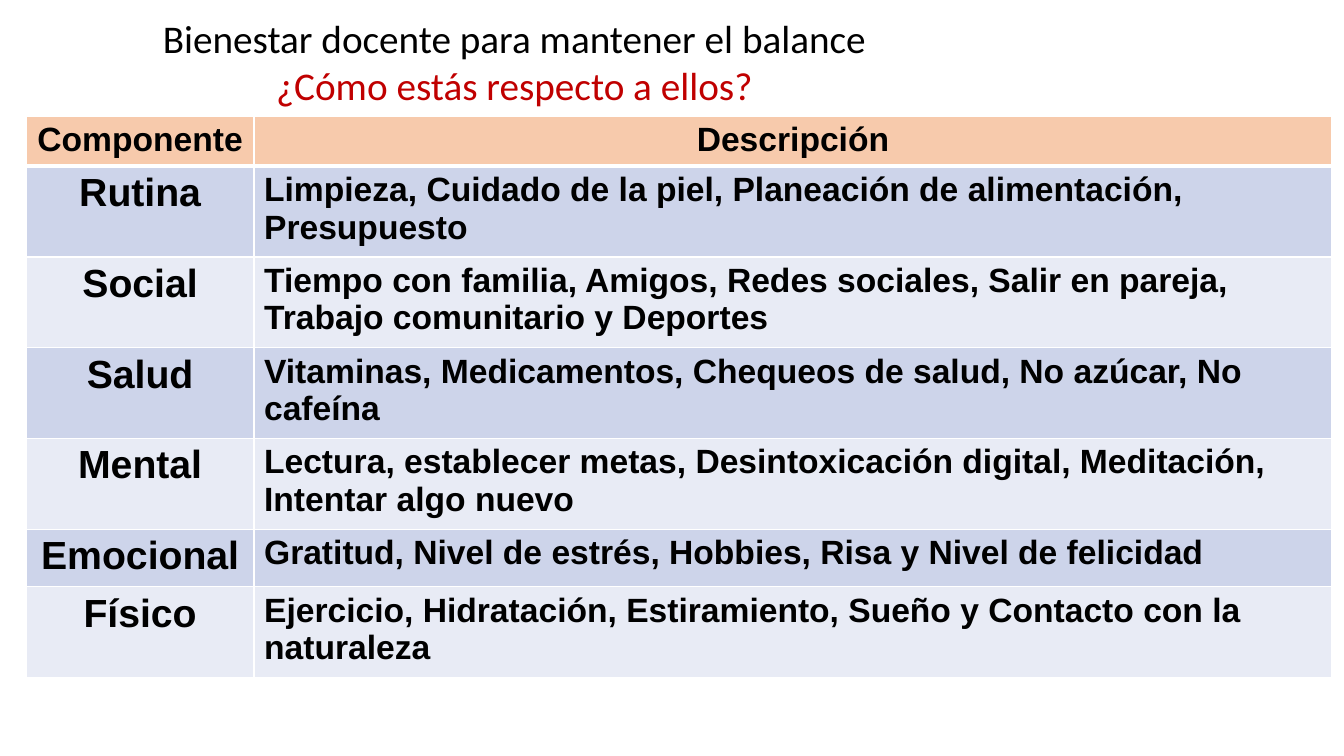
from pptx import Presentation
from pptx.dml.color import RGBColor
from pptx.enum.text import MSO_ANCHOR, MSO_AUTO_SIZE, PP_ALIGN
from pptx.oxml import parse_xml
from pptx.oxml.ns import nsdecls
from pptx.util import Inches, Pt

TITLE_LINES = ["Bienestar docente para mantener el balance", "¿Cómo estás respecto a ellos?"]
ROWS = [
    ("Componente", "Descripción"),
    ("Rutina", "Limpieza, Cuidado de la piel, Planeación de alimentación, Presupuesto"),
    ("Social", "Tiempo con familia, Amigos, Redes sociales, Salir en pareja, Trabajo comunitario y Deportes"),
    ("Salud", "Vitaminas, Medicamentos, Chequeos de salud, No azúcar, No cafeína"),
    ("Mental", "Lectura, establecer metas, Desintoxicación digital, Meditación, Intentar algo nuevo"),
    ("Emocional", "Gratitud, Nivel de estrés, Hobbies, Risa y Nivel de felicidad"),
    ("Físico", "Ejercicio, Hidratación, Estiramiento, Sueño y Contacto con la naturaleza"),
]
COLUMN_WIDTHS = (2.26, 10.69)
HEADER_HEIGHT, ONE_LINE_HEIGHT, TWO_LINE_HEIGHT = 0.5, 0.57, 0.9
ONE_LINE_LIMIT = 62

BLACK = RGBColor(0x00, 0x00, 0x00)
RED = RGBColor(0xC0, 0x00, 0x00)
WHITE = RGBColor(0xFF, 0xFF, 0xFF)
PEACH = RGBColor(0xF7, 0xCA, 0xAC)
BANDS = (RGBColor(0xE8, 0xEB, 0xF5), RGBColor(0xCD, 0xD4, 0xEA))
CENTER, LEFT = PP_ALIGN.CENTER, PP_ALIGN.LEFT
TOP = MSO_ANCHOR.TOP
NO_AUTOFIT = MSO_AUTO_SIZE.NONE
TITLE_ONLY = 5


def write(paragraph, text, font_name, size, color, alignment, bold=False):
    paragraph.alignment = alignment
    run = paragraph.add_run()
    run.text = text
    run.font.name = font_name
    run.font.size = Pt(size)
    run.font.bold = bold
    run.font.color.rgb = color


def add_borders(cell, widths):
    properties = cell._tc.get_or_add_tcPr()
    for position, (side, width) in enumerate(widths.items()):
        properties.insert(position, parse_xml(
            f'<a:{side} {nsdecls("a")} w="{Pt(width)}"><a:solidFill>'
            f'<a:srgbClr val="{WHITE}"/></a:solidFill></a:{side}>'))


def row_height(index, description):
    if index == 0:
        return HEADER_HEIGHT
    return ONE_LINE_HEIGHT if len(description) <= ONE_LINE_LIMIT else TWO_LINE_HEIGHT


def add_title(slide):
    title = slide.shapes.title
    title.left, title.top, title.width, title.height = map(Inches, (1.19, 0.09, 7.82, 1.04))
    frame = title.text_frame
    frame.word_wrap = True
    frame.auto_size = NO_AUTOFIT
    frame.vertical_anchor = TOP
    for index, (line, color) in enumerate(zip(TITLE_LINES, (BLACK, RED))):
        paragraph = frame.add_paragraph() if index else frame.paragraphs[0]
        write(paragraph, line, "Calibri", 28, color, CENTER)


def add_components(slide):
    heights = [row_height(index, row[1]) for index, row in enumerate(ROWS)]
    table = slide.shapes.add_table(
        len(ROWS), len(COLUMN_WIDTHS), Inches(0.26), Inches(1.15),
        Inches(sum(COLUMN_WIDTHS)), Inches(sum(heights))).table
    for column, width in zip(table.columns, COLUMN_WIDTHS):
        column.width = Inches(width)
    for row_index, row in enumerate(ROWS):
        table.rows[row_index].height = Inches(heights[row_index])
        header = row_index == 0
        for column_index, text in enumerate(row):
            cell = table.cell(row_index, column_index)
            cell.fill.solid()
            cell.fill.fore_color.rgb = PEACH if header else BANDS[row_index % 2]
            component = column_index == 0
            size = 28 if component and not header else 24
            alignment = CENTER if component or header else LEFT
            write(cell.text_frame.paragraphs[0], text, "Arial", size, BLACK, alignment, True)
            add_borders(cell, {"lnL": 1, "lnR": 1, "lnT": 3 if row_index == 1 else 1,
                               "lnB": 3 if header else 1})


def main():
    presentation = Presentation()
    presentation.slide_width, presentation.slide_height = Inches(13.33), Inches(7.5)
    slide = presentation.slides.add_slide(presentation.slide_layouts[TITLE_ONLY])
    add_title(slide)
    add_components(slide)
    presentation.save("out.pptx")


if __name__ == "__main__":
    main()
